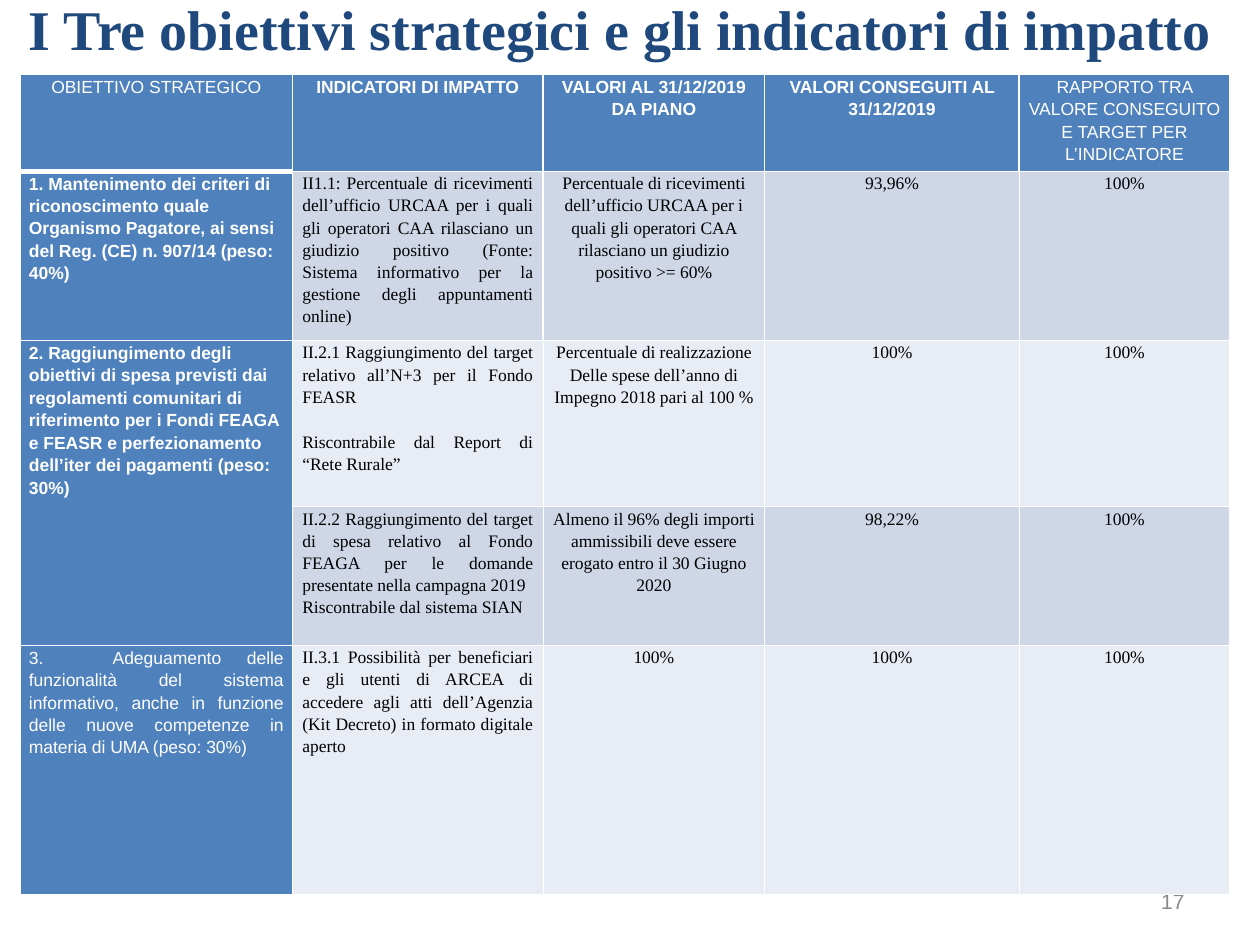
from dataclasses import dataclass

from lxml import etree
from pptx import Presentation
from pptx import util as u
from pptx.dml.color import RGBColor
from pptx.enum import text as t
from pptx.oxml import ns

WHITE, BLUE, NAVY, BLACK, GREY = "FFFFFF", "4F81BD", "1F497D", "000000", "898989"
BANDS = ["CFD7E7", "E8ECF4"]
SANS, SERIF = "Arial", "Times New Roman"
LEFT, MID, RIGHT, JUST = (t.PP_ALIGN.LEFT, t.PP_ALIGN.CENTER,
                          t.PP_ALIGN.RIGHT, t.PP_ALIGN.JUSTIFY)


@dataclass
class Style:
    font: str
    size: float
    color: str
    bold: bool = False
    align: t.PP_ALIGN = LEFT
    lines: float = 1.0


@dataclass
class Edges:
    """Border widths in points."""
    left: float = 0.5
    right: float = 0.5
    top: float = 0.5
    bottom: float = 0.5


@dataclass
class Goal:
    """One strategic goal: its table row, the rows it spans and its look."""
    row: int
    span: int
    text: str
    bold: bool = True
    align: t.PP_ALIGN = LEFT


@dataclass
class Row:
    """One indicator with its planned value, achieved value and ratio."""
    name: str
    plan: str
    done: str
    ratio: str = "100%"


HEADS = [
    ("OBIETTIVO STRATEGICO", False),
    ("INDICATORI DI IMPATTO", True),
    ("VALORI AL 31/12/2019 DA PIANO", True),
    ("VALORI CONSEGUITI AL 31/12/2019", True),
    ("RAPPORTO TRA VALORE CONSEGUITO E TARGET PER L’INDICATORE", False),
]
GOALS = [
    Goal(1, 1, "1. Mantenimento dei criteri di riconoscimento quale Organismo "
         "Pagatore, ai sensi del Reg. (CE) n. 907/14 (peso: 40%)"),
    Goal(2, 2, "2. Raggiungimento degli obiettivi di spesa previsti dai "
         "regolamenti comunitari di riferimento per i Fondi FEAGA e FEASR e "
         "perfezionamento dell’iter dei pagamenti (peso: 30%)"),
    Goal(4, 1, "3. \tAdeguamento delle funzionalità del sistema informativo, "
         "anche in funzione delle nuove competenze in materia di UMA "
         "(peso: 30%)", False, JUST),
]
ROWS = [
    Row("II1.1: Percentuale di ricevimenti dell’ufficio URCAA per i quali gli "
        "operatori CAA rilasciano un giudizio positivo (Fonte: Sistema "
        "informativo per la gestione degli appuntamenti online)",
        "Percentuale di ricevimenti dell’ufficio URCAA per i quali gli "
        "operatori CAA rilasciano un giudizio positivo >= 60%", "93,96%"),
    Row("II.2.1 Raggiungimento del target relativo all’N+3 per il Fondo FEASR\n"
        "Riscontrabile dal Report di “Rete Rurale”",
        "Percentuale di realizzazione Delle spese dell’anno di Impegno 2018 "
        "pari al 100 %", "100%"),
    Row("II.2.2 Raggiungimento del target di spesa relativo al Fondo FEAGA per "
        "le domande presentate nella campagna 2019 \tRiscontrabile dal sistema "
        "SIAN",
        "Almeno il 96% degli importi ammissibili deve essere erogato entro il "
        "30 Giugno 2020", "98,22%"),
    Row("II.3.1 Possibilità per beneficiari e gli utenti di ARCEA di accedere "
        "agli atti dell’Agenzia (Kit Decreto) in formato digitale aperto",
        "100%", "100%"),
]
WIDTHS = [2.16, 1.99, 1.76, 2.02, 1.67]
HEIGHTS = [0.77, 1.34, 1.32, 1.1, 1.98]


def rgb(code: str) -> RGBColor:
    return RGBColor.from_string(code)


def write(frame, words: str, style: Style) -> None:
    frame.text = words
    for i, par in enumerate(frame.paragraphs):
        par.alignment = style.align
        par.line_spacing = style.lines
        par.space_before = u.Pt(13 if i else 0)
        for run in par.runs:
            font = run.font
            font.name, font.size, font.bold = style.font, u.Pt(style.size), style.bold
            font.color.rgb = rgb(style.color)


def place(shape, left: float, top: float, width: float, height: float) -> None:
    shape.left, shape.top = u.Inches(left), u.Inches(top)
    shape.width, shape.height = u.Inches(width), u.Inches(height)


def edge(cell, edges: Edges) -> None:
    props = cell._tc.get_or_add_tcPr()
    for side, width in (("L", edges.left), ("R", edges.right),
                        ("T", edges.top), ("B", edges.bottom)):
        line = etree.SubElement(props, ns.qn(f"a:ln{side}"), w=str(u.Pt(width)))
        fill = etree.SubElement(line, ns.qn("a:solidFill"))
        etree.SubElement(fill, ns.qn("a:srgbClr"), val=WHITE)


def put(cell, words: str, style: Style, fill: str, edges: Edges, pad: float) -> None:
    edge(cell, edges)
    cell.fill.solid()
    cell.fill.fore_color.rgb = rgb(fill)
    cell.margin_left = cell.margin_right = u.Inches(pad)
    cell.margin_top = cell.margin_bottom = 0
    write(cell.text_frame, words, style)


def fill_table(table) -> None:
    table.first_row = table.horz_banding = False
    for col, width in zip(table.columns, WIDTHS):
        col.width = u.Inches(width)
    for row, height in zip(table.rows, HEIGHTS):
        row.height = u.Inches(height)

    # Header row
    for c, (words, bold) in enumerate(HEADS):
        put(table.cell(0, c), words, Style(SANS, 10, WHITE, bold, MID, 1.15),
            BLUE, Edges(1, 1, 1, 0.5 if c else 3), 0.07)

    # Strategic goals in the first column
    for goal in GOALS:
        cell = table.cell(goal.row, 0)
        if goal.span > 1:
            cell.merge(table.cell(goal.row + goal.span - 1, 0))
        put(cell, goal.text,
            Style(SANS, 10, WHITE, goal.bold, goal.align, 1.15),
            BLUE, Edges(1, 0.5, 1, 1), 0.07)

    # Indicators and their values
    for r, row in enumerate(ROWS, 1):
        side = 0.75 if r == 1 else 0.5
        for c, words in enumerate((row.name, row.plan, row.done, row.ratio), 1):
            align = JUST if c == 1 else MID
            edges = Edges(0.5 if c == 1 else side, 0.5 if c == 4 else side)
            put(table.cell(r, c), words, Style(SERIF, 10, BLACK, False, align, 1.15),
                BANDS[(r - 1) % 2], edges, 0.08)


def main() -> None:
    deck = Presentation()
    deck.slide_width, deck.slide_height = u.Inches(10), u.Inches(7.5)
    slide = deck.slides.add_slide(deck.slide_layouts[5])

    # Title
    title = slide.shapes.title
    place(title, 0.13, -0.09, 9.68, 0.64)
    frame = title.text_frame
    frame.auto_size = t.MSO_AUTO_SIZE.NONE
    frame.vertical_anchor = t.MSO_ANCHOR.TOP
    write(frame, "I Tre obiettivi strategici e gli indicatori di impatto",
          Style(SERIF, 32, NAVY, True))

    # Page number, behind the table
    page = slide.shapes.add_textbox(u.Inches(7.17), u.Inches(6.95),
                                    u.Inches(2.33), u.Inches(0.4)).text_frame
    page.word_wrap = True
    page.vertical_anchor = t.MSO_ANCHOR.MIDDLE
    write(page, "17", Style(SANS, 12, GREY, align=RIGHT))

    # Table of goals and indicators
    grid = slide.shapes.add_table(len(HEIGHTS), len(WIDTHS), u.Inches(0.16),
                                  u.Inches(0.59), u.Inches(sum(WIDTHS)),
                                  u.Inches(sum(HEIGHTS)))
    fill_table(grid.table)
    deck.save("out.pptx")


if __name__ == "__main__":
    main()
